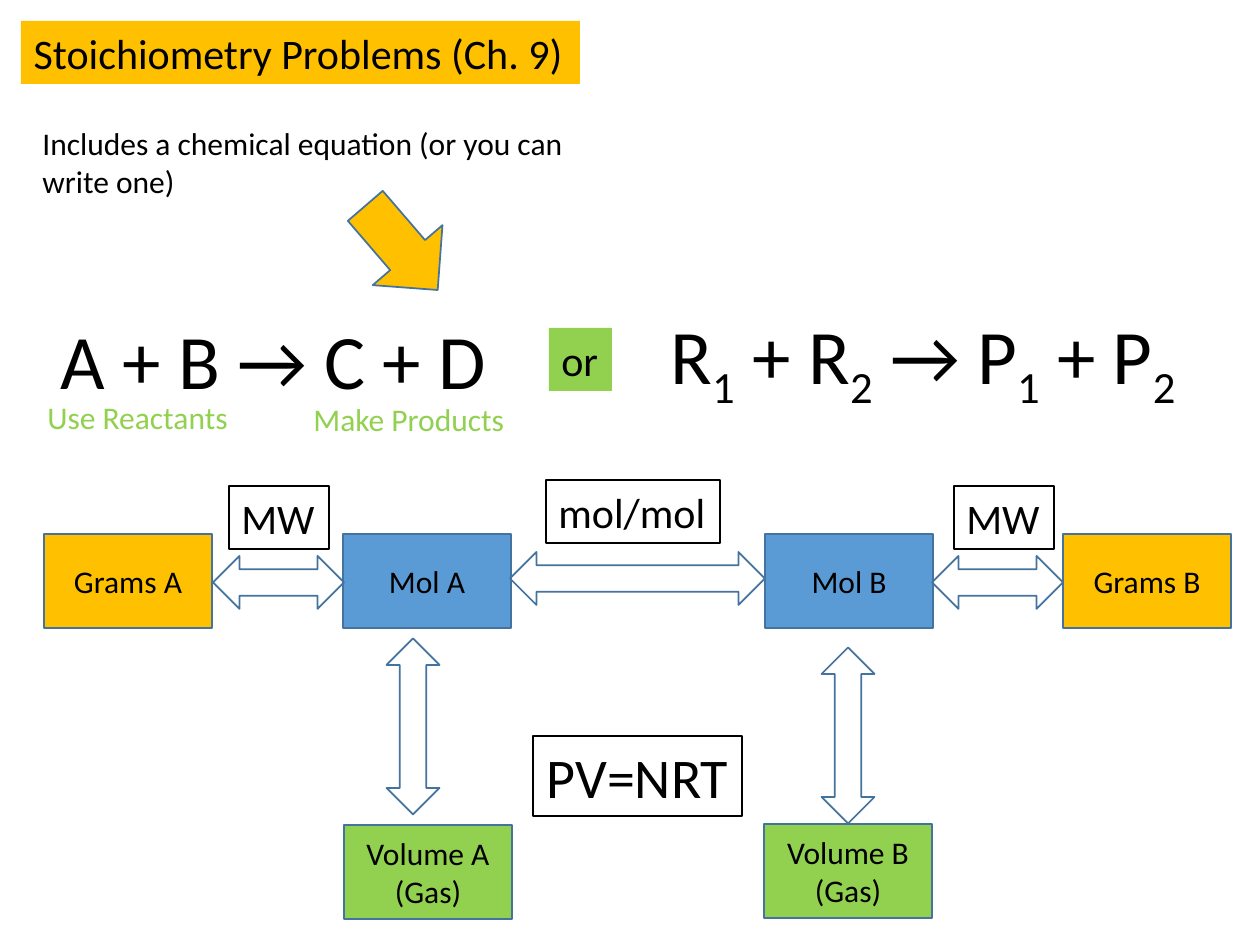
from dataclasses import dataclass

from pptx import Presentation
from pptx.dml.color import RGBColor
from pptx.enum.shapes import MSO_SHAPE
from pptx.enum.text import MSO_ANCHOR, MSO_AUTO_SIZE, PP_ALIGN
from pptx.util import Pt

RECTANGLE = MSO_SHAPE.RECTANGLE
DOUBLE_ARROW = MSO_SHAPE.LEFT_RIGHT_ARROW
RIGHT_ARROW = MSO_SHAPE.RIGHT_ARROW
TOP, MIDDLE = MSO_ANCHOR.TOP, MSO_ANCHOR.MIDDLE
LEFT, CENTER = PP_ALIGN.LEFT, PP_ALIGN.CENTER
NO_AUTOFIT = MSO_AUTO_SIZE.NONE
FIT_SHAPE = MSO_AUTO_SIZE.SHAPE_TO_FIT_TEXT
EMU_PER_PX = 914400 / 126
TITLE_ONLY = 5


@dataclass(frozen=True)
class Theme:
    font: str = "Calibri"
    ink: str = "000000"
    paper: str = "FFFFFF"
    gold: str = "FFC000"
    green: str = "92D050"
    blue: str = "5B9BD5"
    outline: str = "43739E"
    body: int = 18
    label: int = 24
    law: int = 32
    equation: int = 44


def emu(px):
    return round(px * EMU_PER_PX)


class SlideBuilder:
    def __init__(self, slide, theme):
        self.slide = slide
        self.theme = theme

    def paint(self, shape, fill=None, line=None):
        if fill:
            shape.fill.solid()
            shape.fill.fore_color.rgb = RGBColor.from_string(fill)
        else:
            shape.fill.background()
        if line:
            shape.line.color.rgb = RGBColor.from_string(line)
            shape.line.width = Pt(1)
        else:
            shape.line.fill.background()

    def format_text(self, frame, size, color, align):
        for paragraph in frame.paragraphs:
            paragraph.alignment = align
            for run in paragraph.runs:
                run.font.name = self.theme.font
                run.font.size = Pt(size)
                run.font.color.rgb = RGBColor.from_string(color)

    def title(self, text, box, fill):
        heading = self.slide.shapes.title
        heading.left, heading.top, heading.width, heading.height = map(emu, box)
        self.paint(heading, fill)
        frame = heading.text_frame
        frame.text = text
        frame.word_wrap = False
        frame.auto_size = NO_AUTOFIT
        frame.vertical_anchor = TOP
        self.format_text(frame, self.theme.label, self.theme.ink, LEFT)

    def label(self, text, box, size, color=None, fill=None, line=None,
              align=LEFT, wrap=False):
        label = self.slide.shapes.add_textbox(*map(emu, box))
        self.paint(label, fill, line)
        frame = label.text_frame
        frame.text = text
        frame.word_wrap = wrap
        frame.auto_size = FIT_SHAPE
        self.format_text(frame, size, color or self.theme.ink, align)
        return label

    def equation(self, terms, box):
        frame = self.label("", box, self.theme.equation).text_frame
        for text, subscript in terms:
            for part, baseline in ((text, None), (subscript, "-25000")):
                run = frame.paragraphs[0].add_run()
                run.text = part
                if baseline:
                    run.font._element.set("baseline", baseline)
        self.format_text(frame, self.theme.equation, self.theme.ink, LEFT)

    def shape(self, kind, box, fill=None, rotation=0):
        shape = self.slide.shapes.add_shape(kind, *map(emu, box))
        shape.shadow.inherit = False
        shape.rotation = rotation
        self.paint(shape, fill, self.theme.outline)
        return shape

    def quantity(self, text, left, top, fill):
        frame = self.shape(RECTANGLE, (left, top, 168, 94), fill).text_frame
        frame.text = text
        frame.word_wrap = True
        frame.vertical_anchor = MIDDLE
        self.format_text(frame, self.theme.body, self.theme.ink, CENTER)

    def conversion(self, left, top, length, rotation=0):
        self.shape(DOUBLE_ARROW, (left, top, length, 53), rotation=rotation)

    def factor(self, text, box, size, align=LEFT):
        self.label(text, box, size, fill=self.theme.paper,
                   line=self.theme.ink, align=align)


def main():
    theme = Theme()
    deck = Presentation()
    deck.slide_width, deck.slide_height = emu(1260), emu(945)
    slide = deck.slides.add_slide(deck.slide_layouts[TITLE_ONLY])
    builder = SlideBuilder(slide, theme)

    builder.title("Stoichiometry Problems (Ch. 9)", (21, 21, 559, 63), theme.gold)

    for text, left, top, fill in (
        ("Mol A", 343, 534, theme.blue),
        ("Mol B", 765, 534, theme.blue),
        ("Grams A", 44, 534, theme.gold),
        ("Grams B", 1063, 534, theme.gold),
        ("Volume A\n(Gas)", 344, 825, theme.green),
        ("Volume B\n(Gas)", 764, 824, theme.green),
    ):
        builder.quantity(text, left, top, fill)

    builder.conversion(510, 552, 255)
    for left in (213, 932):
        builder.conversion(left, 556, 131)
    for left, top in ((325, 700), (760, 709)):
        builder.conversion(left, top, 176, rotation=90)

    builder.factor("PV=NRT", (533, 736, 209, 80), theme.law, CENTER)
    builder.factor("mol/mol", (546, 480, 174, 63), theme.label)
    for left in (229, 954):
        builder.factor("MW", (left, 486, 100, 63), theme.label)

    builder.shape(RIGHT_ARROW, (346, 202, 111, 92), theme.gold, 49.3)
    builder.label("A + B → C + D", (48, 306, 456, 106), theme.equation)
    builder.equation((("R", "1"), (" + R", "2"), (" → P", "1"), (" + P", "2")),
                     (658, 301, 549, 106))
    builder.label("or", (549, 328, 63, 63), theme.label, fill=theme.green)
    builder.label("Use Reactants", (35, 392, 208, 50), theme.body, theme.green)
    builder.label("Make Products", (301, 394, 218, 50), theme.body, theme.green)
    builder.label("Includes a chemical equation (or you can write one)",
                  (30, 118, 571, 89), theme.body, wrap=True)

    deck.save("out.pptx")


if __name__ == "__main__":
    main()
